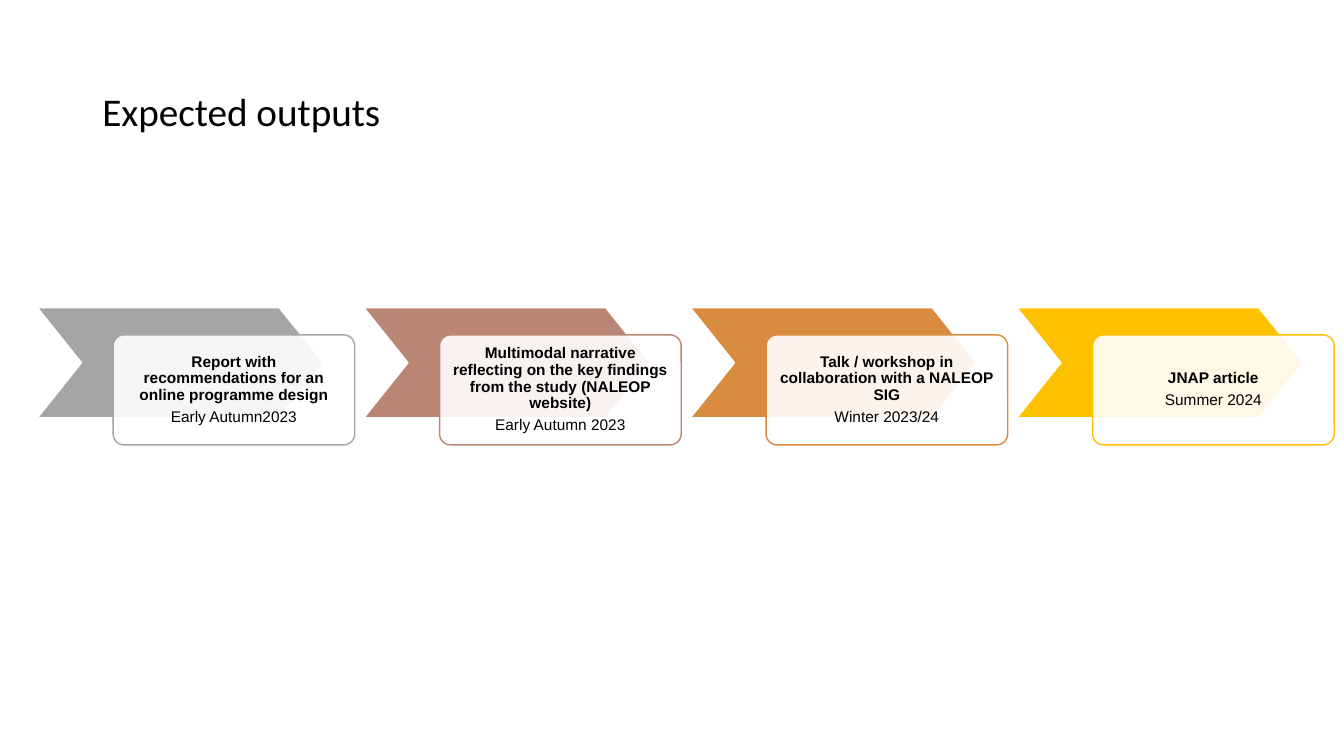
from dataclasses import dataclass

from lxml import etree
from pptx import Presentation
from pptx.dml.color import RGBColor
from pptx.enum.shapes import MSO_SHAPE
from pptx.enum.text import MSO_ANCHOR, PP_ALIGN
from pptx.oxml.ns import qn
from pptx.util import Pt

CHEVRON = MSO_SHAPE.CHEVRON
ROUNDED = MSO_SHAPE.ROUNDED_RECTANGLE
MIDDLE = MSO_ANCHOR.MIDDLE
CENTER = PP_ALIGN.CENTER

TITLE = "Expected outputs"
# (output, date, colour)
OUTPUTS = [
    ("Report with recommendations for an online programme design",
     "Early Autumn2023", "A5A5A5"),
    ("Multimodal narrative reflecting on the key findings from the study "
     "(NALEOP website)", "Early Autumn 2023", "BB8676"),
    ("Talk / workshop in collaboration with a NALEOP SIG",
     "Winter 2023/24", "D98B3F"),
    ("JNAP article", "Summer 2024", "FFC000"),
]


@dataclass(frozen=True)
class Theme:
    text: str = "000000"
    paper: str = "FFFFFF"
    title_font: str = "Calibri"
    body_font: str = "Arial"
    title_size: int = 28
    body_size: int = 11
    card_opacity: int = 90
    line_spacing: float = 0.9


THEME = Theme()

# Lengths in points
SLIDE_SIZE = (960, 540)
TITLE_BOX = (66, 28.8, 828, 104.4)
FIRST_LEFT, TOP, STEP = 26.8, 219.8, 233.2
CHEVRON_WIDTH, HEIGHT = 204.2, 78.6
CARD_SHIFT_X, CARD_SHIFT_Y, CARD_WIDTH = 54, 19.4, 172.6
CARD_INSET = 6.5
PARAGRAPH_GAP = 3.85


def add_block(slide, kind, box, fill, line, adjustment):
    shape = slide.shapes.add_shape(kind, *map(Pt, box))
    shape.shadow.inherit = False
    shape.adjustments[0] = adjustment
    shape.fill.solid()
    shape.fill.fore_color.rgb = RGBColor.from_string(fill)
    shape.line.color.rgb = RGBColor.from_string(line)
    shape.line.width = Pt(1)
    return shape


def set_opacity(shape, percent):
    color = shape.fill._xPr.find(qn("a:solidFill"))[0]
    etree.SubElement(color, qn("a:alpha"), val=str(percent * 1000))


def style_paragraph(paragraph, font_name, size, bold=False):
    paragraph.line_spacing = THEME.line_spacing
    font = paragraph.font
    font.name, font.size, font.bold = font_name, Pt(size), bold
    font.color.rgb = RGBColor.from_string(THEME.text)


def add_title(slide):
    frame = slide.shapes.add_textbox(*map(Pt, TITLE_BOX)).text_frame
    frame.word_wrap = True
    frame.vertical_anchor = MIDDLE
    frame.text = TITLE
    style_paragraph(frame.paragraphs[0], THEME.title_font, THEME.title_size)


def add_output(slide, left, output, date, color):
    """Add a chevron with the card that overlaps its lower right."""
    add_block(slide, CHEVRON, (left, TOP, CHEVRON_WIDTH, HEIGHT),
              color, THEME.paper, 0.4)
    card_box = (left + CARD_SHIFT_X, TOP + CARD_SHIFT_Y, CARD_WIDTH, HEIGHT)
    card = add_block(slide, ROUNDED, card_box, THEME.paper, color, 0.1)
    set_opacity(card, THEME.card_opacity)

    frame = card.text_frame
    frame.word_wrap = True
    frame.vertical_anchor = MIDDLE
    frame.margin_left = frame.margin_right = Pt(CARD_INSET)
    frame.margin_top = frame.margin_bottom = Pt(CARD_INSET)
    frame.text = f"{output}\n{date}"
    for paragraph, bold in zip(frame.paragraphs, (True, False)):
        paragraph.alignment = CENTER
        paragraph.space_after = Pt(PARAGRAPH_GAP)
        style_paragraph(paragraph, THEME.body_font, THEME.body_size, bold)


def main():
    presentation = Presentation()
    presentation.slide_width, presentation.slide_height = map(Pt, SLIDE_SIZE)
    slide = presentation.slides.add_slide(presentation.slide_layouts[6])
    add_title(slide)
    for index, entry in enumerate(OUTPUTS):
        add_output(slide, FIRST_LEFT + index * STEP, *entry)
    presentation.save("out.pptx")


if __name__ == "__main__":
    main()
